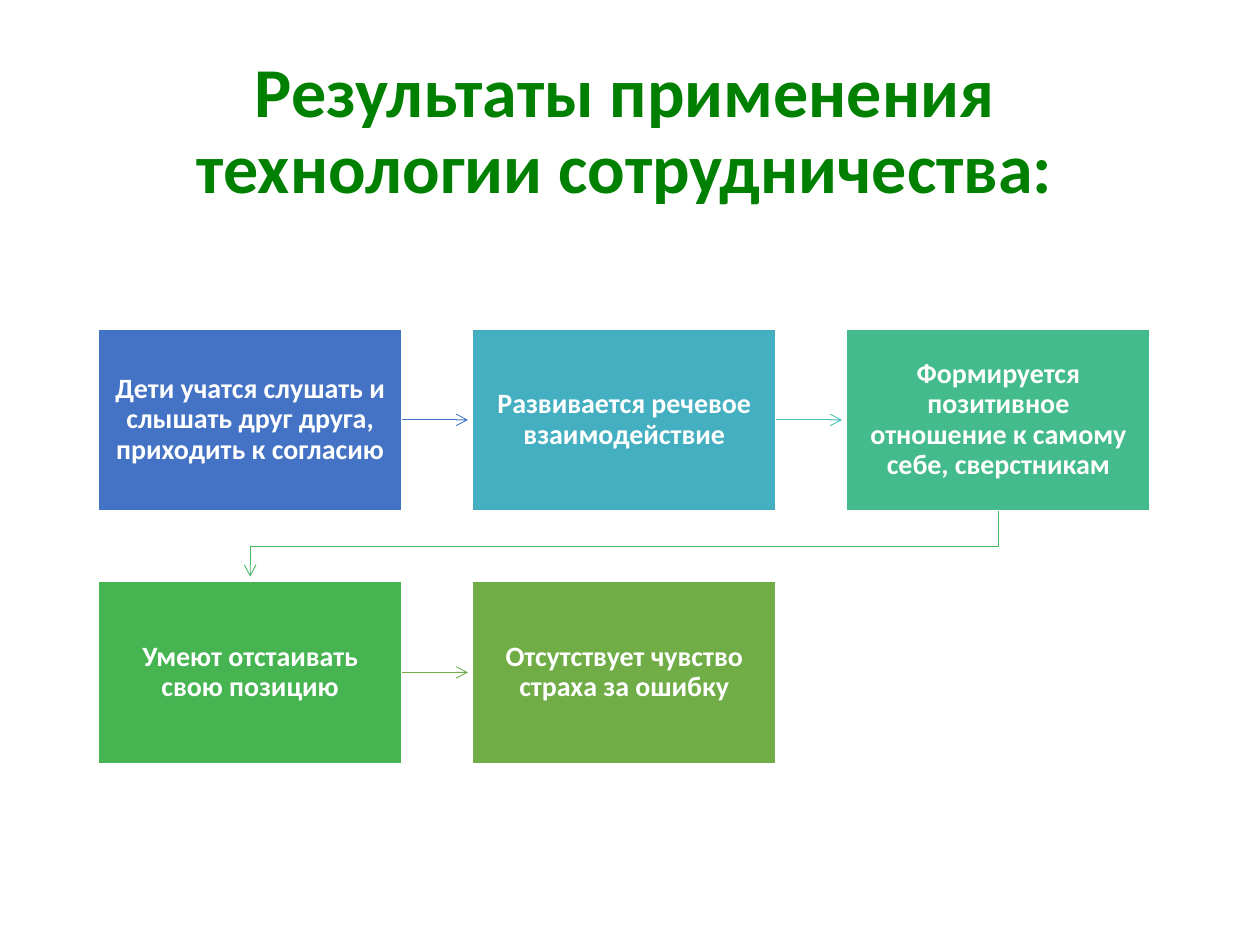
from lxml.etree import SubElement
from pptx import Presentation
from pptx.dml.color import RGBColor
from pptx.enum.shapes import MSO_CONNECTOR, MSO_SHAPE
from pptx.enum.text import MSO_ANCHOR, PP_ALIGN
from pptx.oxml.ns import qn
from pptx.util import Pt

TITLE = "Результаты применения технологии сотрудничества:"
# text, box colour, colour of the arrow to the next step
STEPS = [
    ("Дети учатся слушать и слышать друг друга, приходить к согласию", "4472C4", "4472C4"),
    ("Развивается речевое взаимодействие", "43AFC0", "43BEB9"),
    ("Формируется позитивное отношение к самому себе, сверстникам", "43BB8D", "45B664"),
    ("Умеют отстаивать свою позицию", "45B451", "70AD47"),
    ("Отсутствует чувство страха за ошибку", "70AD47", None),
]
COLUMNS = 3
LEFT, TOP = 56.2, 187.9
BOX_W, BOX_H = 173.5, 104.1
PITCH_X, PITCH_Y = 213.8, 144.3
ARROW_GAP = 2.6  # between an arrowhead and the box it points to


def color(value):
    return RGBColor.from_string(value)


def write(shape, text, size, fill, inset_x, inset_y, space_after=0):
    frame = shape.text_frame
    frame.word_wrap = True
    frame.vertical_anchor = MSO_ANCHOR.MIDDLE
    frame.margin_left = frame.margin_right = Pt(inset_x)
    frame.margin_top = frame.margin_bottom = Pt(inset_y)
    paragraph = frame.paragraphs[0]
    paragraph.text = text
    paragraph.alignment = PP_ALIGN.CENTER
    paragraph.line_spacing = 0.9
    paragraph.space_after = Pt(space_after)
    font = paragraph.font
    font.name, font.size, font.bold = "Calibri", Pt(size), True
    font.color.rgb = color(fill)


def style_arrow(arrow, stroke):
    arrow.line.color.rgb = color(stroke)
    arrow.line.width = Pt(0.5)
    SubElement(arrow.line._get_or_add_ln(), qn("a:tailEnd"), type="arrow")


def add_step(slide, x, y, text, fill):
    box = slide.shapes.add_shape(MSO_SHAPE.RECTANGLE, Pt(x), Pt(y), Pt(BOX_W), Pt(BOX_H))
    box.shadow.inherit = False
    box.fill.solid()
    box.fill.fore_color.rgb = color(fill)
    box.line.color.rgb = color("FFFFFF")
    box.line.width = Pt(1)
    write(box, text, 16, "FFFFFF", 8.6, 8.6, space_after=5.6)
    return box


def add_row_arrow(slide, box, x, y, next_x, stroke):
    middle = y + BOX_H / 2
    arrow = slide.shapes.add_connector(
        MSO_CONNECTOR.STRAIGHT, Pt(x + BOX_W), Pt(middle), Pt(next_x - ARROW_GAP), Pt(middle))
    arrow.begin_connect(box, 3)
    style_arrow(arrow, stroke)
    SubElement(arrow._element.spPr, qn("a:effectLst"))


def add_wrap_arrow(slide, x, y, next_x, next_y, stroke):
    """Bent arrow from the end of one row to the start of the next."""
    start_x, end_x = x + BOX_W / 2, next_x + BOX_W / 2
    start_y, end_y = y + BOX_H, next_y - ARROW_GAP
    bend_y = (start_y + next_y) / 2
    builder = slide.shapes.build_freeform(Pt(start_x), Pt(start_y))
    corners = [(start_x, bend_y), (end_x, bend_y), (end_x, end_y)]
    builder.add_line_segments([(Pt(px), Pt(py)) for px, py in corners], close=False)
    arrow = builder.convert_to_shape()
    arrow.shadow.inherit = False
    arrow.fill.background()
    style_arrow(arrow, stroke)


presentation = Presentation()
presentation.slide_width, presentation.slide_height = Pt(720), Pt(540)
slide = presentation.slides.add_slide(presentation.slide_layouts[6])

title = slide.shapes.add_textbox(Pt(65.5), Pt(26.6), Pt(582.5), Pt(98.6))
write(title, TITLE, 40, "008000", 7.2, 3.6)

places = [(LEFT + i % COLUMNS * PITCH_X, TOP + i // COLUMNS * PITCH_Y) for i in range(len(STEPS))]
boxes = [add_step(slide, x, y, text, fill) for (x, y), (text, fill, _) in zip(places, STEPS)]

for box, (x, y), (next_x, next_y), (_, _, stroke) in zip(boxes, places, places[1:], STEPS):
    if next_y == y:
        add_row_arrow(slide, box, x, y, next_x, stroke)
    else:
        add_wrap_arrow(slide, x, y, next_x, next_y, stroke)

presentation.save("out.pptx")
